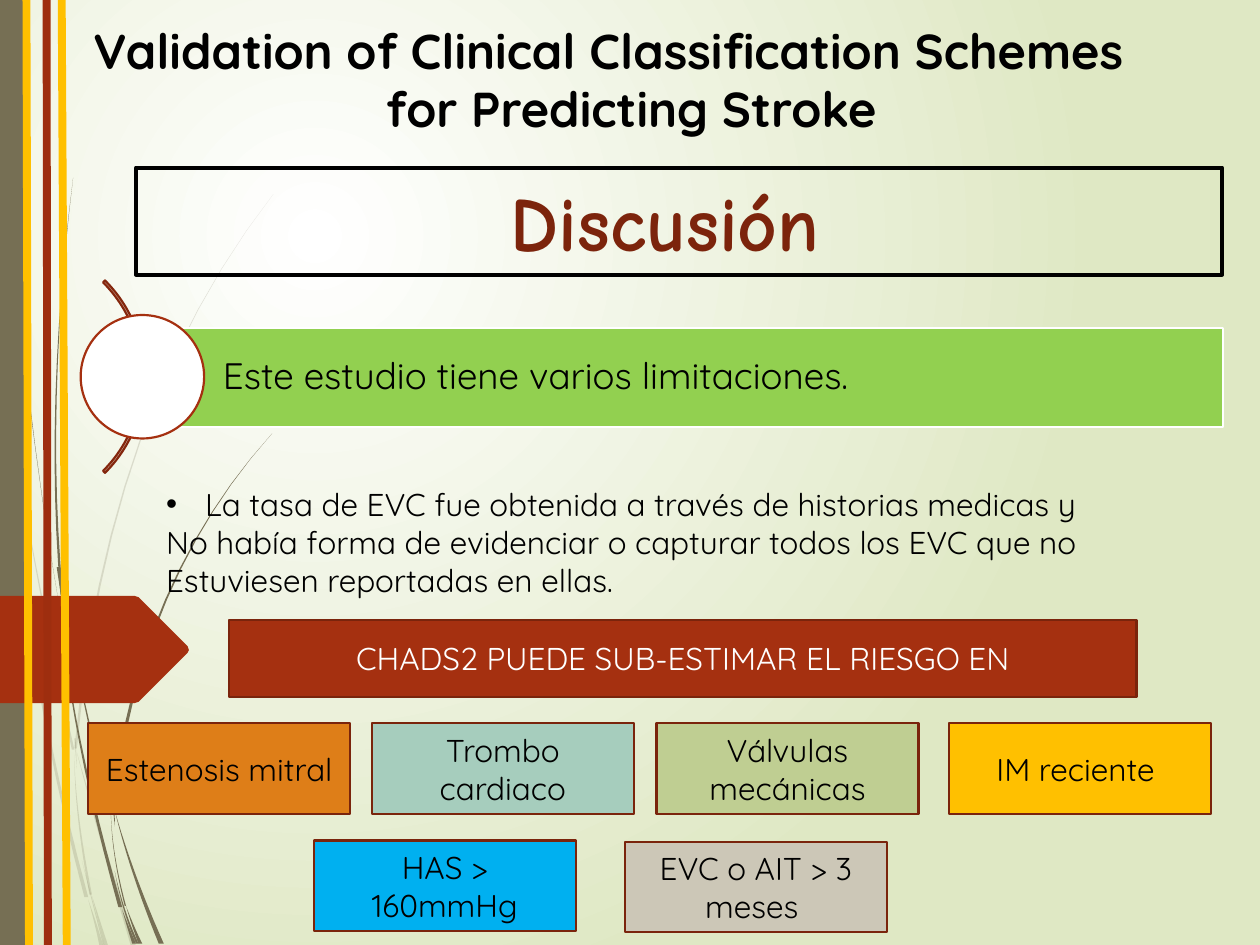
from dataclasses import dataclass

from lxml import etree
from pptx import Presentation
from pptx.dml.color import RGBColor
from pptx.enum.shapes import MSO_CONNECTOR, MSO_SHAPE
from pptx.enum.text import MSO_ANCHOR, MSO_AUTO_SIZE, PP_ALIGN
from pptx.oxml.ns import qn
from pptx.util import Pt

PX = 9144  # EMU in one px, at 100 px to the inch
CURVE_STEPS = 12
RECTANGLE, ELLIPSE, BLOCK_ARC = MSO_SHAPE.RECTANGLE, MSO_SHAPE.OVAL, MSO_SHAPE.BLOCK_ARC
STRAIGHT = MSO_CONNECTOR.STRAIGHT
LEFT, CENTER = PP_ALIGN.LEFT, PP_ALIGN.CENTER
TOP, MIDDLE = MSO_ANCHOR.TOP, MSO_ANCHOR.MIDDLE
GROW = MSO_AUTO_SIZE.SHAPE_TO_FIT_TEXT


@dataclass(frozen=True)
class Theme:
    font: str = "Quicksand"
    heading_font: str = "Comic Neue"
    title_size: int = 28
    heading_size: int = 44
    banner_size: int = 21
    body_size: int = 18
    black: str = "000000"
    white: str = "FFFFFF"
    background_edge: str = "DFE8C4"
    taupe: str = "766F54"
    rust: str = "A53010"
    rust_stripe: str = "9E2E0F"
    rust_edge: str = "7A240C"
    arc_edge: str = "84260D"
    heading: str = "7C240C"
    gold: str = "FFC000"
    green: str = "92D050"
    orange: str = "DE7E18"
    teal: str = "A6CDBD"
    olive: str = "BFCE92"
    blue: str = "00B0F0"
    stone: str = "CCC7B7"


theme = Theme()


def add_outline(points, color, opacity=100):
    """Add a closed, borderless polygon through points given in px."""
    corners = [(x * PX, y * PX) for x, y in points]
    builder = slide.shapes.build_freeform(*corners[0], scale=1.0)
    builder.add_line_segments(corners[1:], close=True)
    shape = builder.convert_to_shape()
    shape.shadow.inherit = False
    shape.line.fill.background()
    shape.fill.solid()
    shape.fill.fore_color.rgb = RGBColor.from_string(color)
    if opacity < 100:
        color_element = shape.element.spPr.find(".//" + qn("a:srgbClr"))
        etree.SubElement(color_element, qn("a:alpha"), val=str(opacity * 1000))


def write_line(paragraph, text, size, color=theme.black, bold=False, font=theme.font):
    run = paragraph.add_run()
    run.text = text
    run.font.name = font
    run.font.size = Pt(size)
    run.font.bold = bold
    run.font.color.rgb = RGBColor.from_string(color)


presentation = Presentation()
presentation.slide_width, presentation.slide_height = 1000 * PX, 750 * PX
slide = presentation.slides.add_slide(presentation.slide_layouts[5])

# Background: radial gradient centred in the upper left
background = slide.background.fill
background.gradient()
for stop, color in zip(background.gradient_stops, (theme.white, theme.background_edge)):
    stop.color.rgb = RGBColor.from_string(color)
linear = slide.element.find(".//" + qn("a:lin"))
radial = etree.Element(qn("a:path"), path="circle")
etree.SubElement(radial, qn("a:fillToRect"), l="50000", t="50000", r="100000", b="100000")
linear.getparent().replace(linear, radial)

# Grass wisps: tip, middle and base of a curved blade, and its width at the base
pale_wisps = (
    ((8, 350), (4, 315), (0, 285), 2),
    ((10, 345), (31, 466), (57, 595), 2),
    ((61, 597), (79, 664), (104, 751), 4),
    ((73, 711), (78, 731), (83, 751), 3),
    ((8, 350), (28, 530), (67, 712), 3),
    ((59, 599), (62, 650), (71, 710), 2),
    ((217, 154), (111, 349), (59, 594), 2),
    ((70, 714), (75, 733), (79, 751), 3),
    ((61, 610), (60, 598), (59, 586), 1),
    ((65, 683), (72, 711), (82, 751), 1),
)
dark_wisps = (
    ((47, 481), (14, 233), (2, 0), 1),
    ((50, 472), (67, 560), (86, 642), 2),
    ((91, 643), (106, 695), (126, 749), 4),
    ((47, 477), (63, 590), (94, 720), 3),
    ((58, 141), (44, 315), (48, 472), 2),
    ((100, 719), (105, 735), (110, 749), 3),
    ((53, 505), (49, 477), (45, 450), 2),
    ((216, 344), (131, 476), (88, 638), 3),
    ((97, 722), (101, 736), (105, 749), 3),
    ((88, 645), (91, 680), (99, 719), 1),
    ((91, 656), (90, 645), (88, 632), 2),
    ((91, 691), (98, 721), (108, 749), 2),
)
for wisps, opacity in ((pale_wisps, 20), (dark_wisps, 100)):
    for tip, middle, base, width in wisps:
        bend = [2 * m - (a + b) / 2 for a, m, b in zip(tip, middle, base)]
        near_edge, far_edge = [], []
        for step in range(CURVE_STEPS + 1):
            t = step / CURVE_STEPS
            x, y = ((1 - t) ** 2 * a + 2 * t * (1 - t) * c + t * t * b
                    for a, c, b in zip(tip, bend, base))
            near_edge.append((x, y))
            far_edge.append((x + width * t, y))
        add_outline(near_edge + far_edge[:0:-1], theme.taupe, opacity)

# Left edge: band, arrow tag and vertical stripes
band = slide.shapes.add_shape(RECTANGLE, 0, 0, 20 * PX, 750 * PX)
band.shadow.inherit = False
band.line.fill.background()
band.fill.solid()
band.fill.fore_color.rgb = RGBColor.from_string(theme.taupe)
add_outline([(-3, 473), (107, 473), (110, 474), (149, 513), (150, 516), (149, 518),
             (110, 557), (107, 558), (-3, 558)], theme.rust)
for top_x, bottom_x, bottom, color in ((21, 23, 750, theme.gold), (49, 53, 753, theme.gold),
                                       (37, 38, 750, theme.rust_stripe)):
    stripe = slide.shapes.add_connector(STRAIGHT, top_x * PX, 0, bottom_x * PX, bottom * PX)
    stripe.line.color.rgb = RGBColor.from_string(color)
    stripe.line.width = Pt(4.5)
    etree.SubElement(stripe.element.spPr, qn("a:effectLst"))

# Title, brought in front of the decoration, and body text
title = slide.shapes.title
title.element.getparent().append(title.element)
title.left, title.top, title.width, title.height = 64 * PX, 11 * PX, 863 * PX, 104 * PX
body = slide.shapes.add_textbox(122 * PX, 380 * PX, 798 * PX, 101 * PX)
text_blocks = (
    (title, theme.title_size, True, (("Validation of Clinical Classification Schemes", LEFT),
                                     (" for Predicting Stroke", CENTER))),
    (body, theme.body_size, False, (
        ("La tasa de EVC fue obtenida a través de historias medicas y", LEFT),
        ("No había forma de evidenciar o capturar todos los EVC que no", LEFT),
        ("Estuviesen reportadas en ellas.", LEFT))),
)
for shape, size, bold, lines in text_blocks:
    frame = shape.text_frame
    frame.word_wrap, frame.auto_size, frame.vertical_anchor = False, GROW, TOP
    for index, (text, alignment) in enumerate(lines):
        paragraph = frame.add_paragraph() if index else frame.paragraphs[0]
        paragraph.alignment = alignment
        write_line(paragraph, text, size, bold=bold)
bulleted = body.text_frame.paragraphs[0]._p.get_or_add_pPr()
bulleted.set("marL", str(31 * PX))
bulleted.set("indent", str(-31 * PX))
etree.SubElement(bulleted, qn("a:buFont"), typeface="Arial")
etree.SubElement(bulleted, qn("a:buChar"), char="•")

# Banner with arc and circle, heading, risk bar and the six risk cards
cards = (
    (70, 574, theme.orange, "Estenosis mitral"),
    (295, 574, theme.teal, "Trombo cardiaco"),
    (521, 574, theme.olive, "Válvulas mecánicas"),
    (249, 667, theme.blue, "HAS > 160mmHg"),
    (753, 574, theme.gold, "IM reciente "),
    (496, 668, theme.stone, "EVC o AIT > 3 meses "),
)
plain = {"size": theme.body_size}
heading_style = {"size": theme.heading_size, "color": theme.heading, "bold": True,
                 "font": theme.heading_font}
boxes = [
    (BLOCK_ARC, (-101, 191, 216, 216), None, theme.arc_edge, "", plain),
    (RECTANGLE, (114, 260, 857, 79), theme.green, theme.white,
     "Este estudio tiene varios limitaciones.", {"size": theme.banner_size}),
    (ELLIPSE, (64, 250, 98, 98), theme.white, theme.rust, "", plain),
    (RECTANGLE, (108, 133, 862, 85), None, theme.black, "Discusión ", heading_style),
    (RECTANGLE, (182, 492, 720, 61), theme.rust, theme.rust_edge,
     "CHADS2 PUEDE SUB-ESTIMAR EL RIESGO EN", {"size": theme.body_size, "color": theme.white}),
    *((RECTANGLE, (left, top, 208, 72), fill, theme.rust_edge, text, plain)
      for left, top, fill, text in cards),
]
box_shapes = []
for kind, place, fill, edge, text, style in boxes:
    shape = slide.shapes.add_shape(kind, *(length * PX for length in place))
    shape.shadow.inherit = False
    shape.line.color.rgb = RGBColor.from_string(edge)
    shape.line.width = Pt(1.25)
    if fill:
        shape.fill.solid()
        shape.fill.fore_color.rgb = RGBColor.from_string(fill)
    else:
        shape.fill.background()
    if text:
        frame = shape.text_frame
        frame.word_wrap, frame.vertical_anchor = True, MIDDLE
        frame.paragraphs[0].alignment = CENTER
        write_line(frame.paragraphs[0], text, **style)
    box_shapes.append(shape)

arc, banner, circle, heading = box_shapes[:4]
for position, value in enumerate((189, 27, 0.01)):
    arc.adjustments[position] = value
heading.line.width = Pt(2.25)
banner_frame = banner.text_frame
banner_frame.margin_left = 63 * PX
banner_frame.margin_top = banner_frame.margin_right = banner_frame.margin_bottom = 6 * PX
banner_frame.paragraphs[0].alignment = LEFT
banner_frame.paragraphs[0].line_spacing = 0.9

presentation.save("out.pptx")
